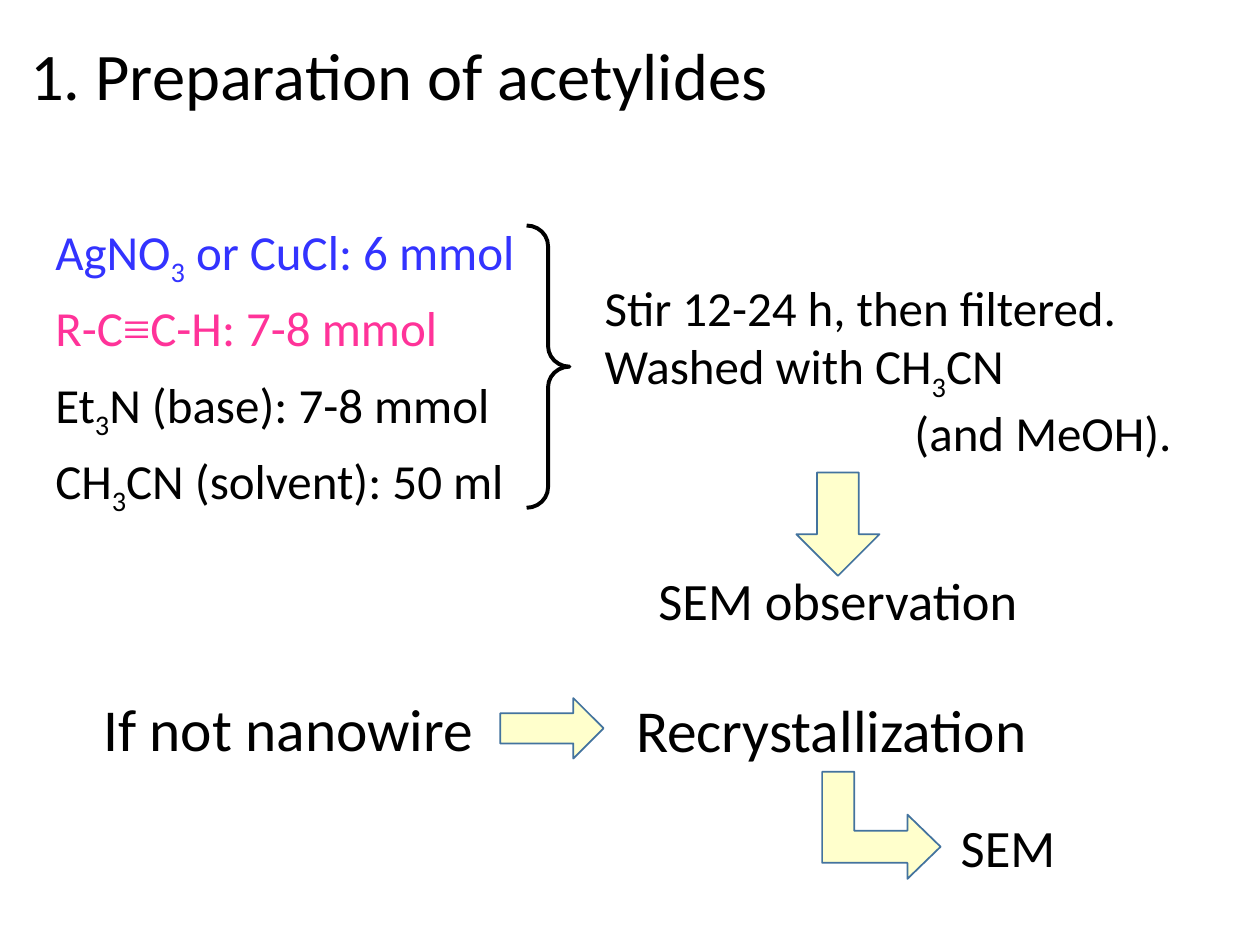
import lxml.etree
import pptx
import pptx.dml.color
import pptx.enum.shapes
import pptx.enum.text
import pptx.oxml.ns
import pptx.util

COLUMNS, ROWS = 100, 75
COLORS = {
    "ink": "000000",
    "metal": "3333FF",
    "alkyne": "FF3399",
    "arrow": "FFFFCC",
    "outline": "43739E",
}
SHAPES = pptx.enum.shapes.MSO_SHAPE
ALIGN = pptx.enum.text.PP_ALIGN

deck = pptx.Presentation()
deck.slide_width = pptx.util.Inches(10)
deck.slide_height = pptx.util.Inches(7.5)
CELL_WIDTH = deck.slide_width / COLUMNS
CELL_HEIGHT = deck.slide_height / ROWS


def color(name):
    return pptx.dml.color.RGBColor.from_string(COLORS[name])


def place(box, left, top, width, height):
    return (
        round((box[0] + left) * CELL_WIDTH),
        round((box[1] + top) * CELL_HEIGHT),
        round(width * CELL_WIDTH),
        round(height * CELL_HEIGHT),
    )


def add_span(para, text, size, ink, typeface="Calibri", subscript=False):
    span = para.add_run()
    span.text = text
    span.font.size = pptx.util.Pt(size)
    span.font.name = typeface
    span.font.color.rgb = color(ink)
    properties = span.font._element
    east_asian = lxml.etree.SubElement(properties, pptx.oxml.ns.qn("a:ea"))
    east_asian.set("typeface", typeface)
    if subscript:
        properties.set("baseline", "-25000")


def add_text(page, area, *lines, size=28, ink="ink", align=ALIGN.LEFT, last_indent=0):
    frame = page.shapes.add_textbox(*area).text_frame
    frame.word_wrap = True
    frame.auto_size = pptx.enum.text.MSO_AUTO_SIZE.SHAPE_TO_FIT_TEXT
    for index, line in enumerate(lines):
        para = frame.add_paragraph() if index else frame.paragraphs[0]
        para.alignment = align
        if last_indent and index == len(lines) - 1:
            margin = para._p.get_or_add_pPr()
            margin.set("marL", str(round(last_indent * CELL_WIDTH)))
            margin.set("indent", "0")
        spans = [(line, {})] if isinstance(line, str) else line
        for text, style in spans:
            add_span(para, text, size, ink, **style)


def add_arrow(page, kind, area, rotation=0, adjustments=()):
    arrow = page.shapes.add_shape(kind, *area)
    arrow.shadow.inherit = False
    arrow.rotation = rotation
    for index, value in enumerate(adjustments):
        arrow.adjustments[index] = value
    arrow.fill.solid()
    arrow.fill.fore_color.rgb = color("arrow")
    arrow.line.color.rgb = color("outline")
    arrow.line.width = pptx.util.Pt(1)


def formula(before, after):
    return [(before, {}), ("3", {"subscript": True}), (after, {})]


def add_title(page, box):
    add_text(page, place(box, 0, 0, *box[2:]), "1. Preparation of acetylides", size=38)


def add_reagents(page, box):
    alkyne = [("R-C", {}), ("≡", {"typeface": "Times New Roman"}), ("C-H: 7-8 mmol", {})]
    reagents = [
        (formula("AgNO", " or CuCl: 6 mmol"), "metal"),
        (alkyne, "alkyne"),
        (formula("Et", "N (base): 7-8 mmol"), "ink"),
        (formula("CH", "CN (solvent): 50 ml"), "ink"),
    ]
    pitch = box[3] / len(reagents)
    for index, (line, ink) in enumerate(reagents):
        add_text(page, place(box, 0, index * pitch, 40.1, 5.7), line, ink=ink)
    brace = page.shapes.add_shape(SHAPES.RIGHT_BRACE, *place(box, 38.4, 0.8, 3.4, 22.4))
    brace.shadow.inherit = False
    brace.adjustments[0] = 0.48
    brace.adjustments[1] = 0.5
    brace.fill.background()
    brace.line.color.rgb = color("ink")
    brace.line.width = pptx.util.Pt(2.25)


def add_treatment(page, box):
    add_text(
        page,
        place(box, 0, 0, box[2], 15.1),
        "Stir 12-24 h, then filtered.",
        formula("Washed with CH", "CN"),
        "(and MeOH).",
        last_indent=24.6,
    )
    add_arrow(page, SHAPES.RIGHT_ARROW, place(box, 15.4, 16.8, 8.2, 6.6), rotation=90)
    add_text(page, place(box, 2.4, 23.1, 34.2, 6.1), "SEM observation", size=30, align=ALIGN.CENTER)


def add_recrystallization(page, box):
    add_text(page, place(box, 0, 0, 35.6, 6.7), "If not nanowire", size=34)
    add_arrow(page, SHAPES.RIGHT_ARROW, place(box, 32.5, 1, 8.2, 4.8))
    add_text(page, place(box, 42.3, 0.1, 34.2, 6.7), "Recrystallization", size=34)
    add_arrow(
        page,
        SHAPES.BENT_UP_ARROW,
        place(box, 58.5, 6.4, 8.5, 9.4),
        rotation=90,
        adjustments=(0.3, 0.3, 0.31),
    )
    add_text(page, place(box, 66.7, 9.8, 12.2, 6.1), "SEM", size=30, align=ALIGN.CENTER)


def main():
    page = deck.slides.add_slide(deck.slide_layouts[6])
    add_title(page, (1.4, 2.2, 97.3, 7.4))
    add_reagents(page, (3.4, 17.1, 41.8, 24.2))
    add_treatment(page, (47, 21.5, 49.6, 29.2))
    add_recrystallization(page, (7.2, 54.4, 78.9, 15.9))
    deck.save("out.pptx")


if __name__ == "__main__":
    main()
